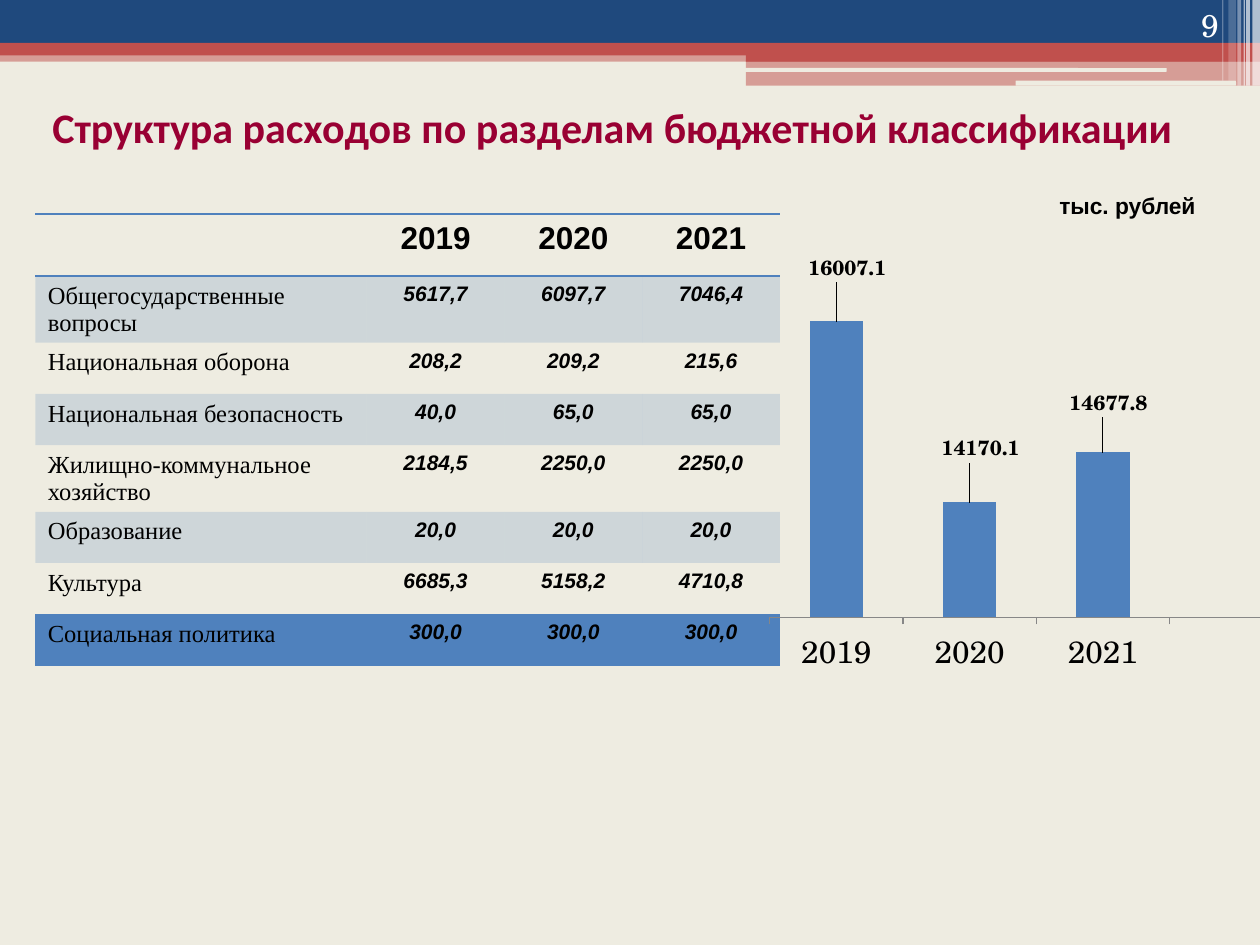
from dataclasses import dataclass

from lxml.etree import SubElement
from pptx import Presentation
from pptx.chart.data import CategoryChartData
from pptx.dml.color import RGBColor
from pptx.enum.chart import XL_CHART_TYPE, XL_LABEL_POSITION, XL_TICK_LABEL_POSITION, XL_TICK_MARK
from pptx.enum.shapes import MSO_SHAPE
from pptx.enum.text import MSO_ANCHOR, MSO_AUTO_SIZE, PP_ALIGN
from pptx.oxml import parse_xml
from pptx.oxml.ns import nsdecls, qn
from pptx.util import Inches, Pt

COLORS = {
    "cream": "EEECE1", "navy": "1F497D", "red": "C0504D", "blue": "4F81BD",
    "white": "FFFFFF", "black": "000000", "crimson": "990033", "gray": "878787",
}
SLIDE_WIDTH, SLIDE_HEIGHT = Inches(10), Inches(7.5)
COLUMN, ROW = SLIDE_WIDTH / 100, SLIDE_HEIGHT / 75
NO_STYLE = "{2D5ABB26-0587-4C30-8999-92F81FD0307C}"

YEARS = ["2019", "2020", "2021"]
EXPENSES = [
    ("Общегосударственные вопросы", "5617,7", "6097,7", "7046,4"),
    ("Национальная оборона", "208,2", "209,2", "215,6"),
    ("Национальная безопасность", "40,0", "65,0", "65,0"),
    ("Жилищно-коммунальное хозяйство", "2184,5", "2250,0", "2250,0"),
    ("Образование", "20,0", "20,0", "20,0"),
    ("Культура", "6685,3", "5158,2", "4710,8"),
    ("Социальная политика", "300,0", "300,0", "300,0"),
]
TOTALS = [16007.1, 14170.1, 14677.8]
LABEL_OFFSETS = [(0.02, -0.08), (0.02, -0.08), (0.01, -0.07)]


@dataclass
class Box:
    left: float
    top: float
    width: float
    height: float

    def inner(self, left, top, width, height):
        return Box(self.left + left, self.top + top, width, height)

    def emu(self):
        return (round(self.left * COLUMN), round(self.top * ROW),
                round(self.width * COLUMN), round(self.height * ROW))


def color(name):
    return RGBColor.from_string(COLORS[name])


def paint(fill, name, alpha=100):
    fill.solid()
    fill.fore_color.rgb = color(name)
    if alpha < 100:
        SubElement(fill._xPr.find(".//" + qn("a:srgbClr")), qn("a:alpha"), val=str(alpha * 1000))


def style(font, size, family, name="black", bold=False, italic=False):
    font.size, font.name, font.bold, font.italic = Pt(size), family, bold, italic
    font.color.rgb = color(name)


def add_bar(slide, box, name, alpha=100, kind=MSO_SHAPE.RECTANGLE):
    shape = slide.shapes.add_shape(kind, *box.emu())
    shape.shadow.inherit = False
    shape.line.fill.background()
    paint(shape.fill, name, alpha)


def add_header(slide, box):
    half = box.width - 59.2
    for place, name, alpha in [
        ((0, 4, box.width, 0.9), "red", 50),
        ((0, 0, box.width, 3.4), "navy", 100),
        ((0, 3.4, box.width, 1), "red", 100),
        ((59.2, 3.9, half, 1), "red", 100),
        ((59.2, 4.8, half, 2), "red", 50),
    ]:
        add_bar(slide, box.inner(*place), name, alpha)
    for place in [(59.1, 5.4, 33.5, 0.3), (80.6, 6.4, 17.5, 0.4)]:
        add_bar(slide, box.inner(*place), "cream", kind=MSO_SHAPE.ROUNDED_RECTANGLE)
    for left, width, height, alpha in [
        (99.4, 0.6, 6.8, 65), (98.9, 0.3, 6.8, 65), (98.7, 0.1, 6.8, 60),
        (98.2, 0.3, 6.8, 40), (97.5, 0.6, 6.4, 20), (97, 0.1, 6.4, 30),
    ]:
        add_bar(slide, box.inner(left, 0, width, height), "white", alpha)


def add_text(slide, box, text, align, grow=True, **look):
    frame = slide.shapes.add_textbox(*box.emu()).text_frame
    frame.word_wrap = True
    if grow:
        frame.auto_size = MSO_AUTO_SIZE.SHAPE_TO_FIT_TEXT
    else:
        frame.vertical_anchor = MSO_ANCHOR.BOTTOM
    paragraph = frame.paragraphs[0]
    paragraph.text, paragraph.alignment = text, align
    style(paragraph.font, **look)


def add_border(cell, side):
    line = SubElement(cell._tc.get_or_add_tcPr(), qn("a:" + side), w=str(Pt(1)))
    SubElement(SubElement(line, qn("a:solidFill")), qn("a:srgbClr"), val=COLORS["blue"])


def add_expense_table(slide, box):
    rows = [("", *YEARS), *EXPENSES]
    table = slide.shapes.add_table(len(rows), len(rows[0]), *box.emu()).table
    table._tbl.tblPr.find(qn("a:tableStyleId")).text = NO_STYLE
    year_width = 10.93
    for index, column in enumerate(table.columns):
        column.width = round((year_width if index else box.width - 3 * year_width) * COLUMN)
    for row_index, values in enumerate(rows):
        table.rows[row_index].height = round((4.06 if row_index else 4.9) * ROW)
        for column_index, text in enumerate(values):
            cell = table.cell(row_index, column_index)
            if row_index == 0:
                add_border(cell, "lnT")
            if row_index in (0, len(rows) - 1):
                add_border(cell, "lnB")
            if row_index % 2:
                paint(cell.fill, "blue", 20)
            else:
                cell.fill.background()
            if not text:
                continue
            paragraph = cell.text_frame.paragraphs[0]
            paragraph.text = text
            if column_index == 0:
                style(paragraph.font, 14, "Times New Roman")
                continue
            paragraph.alignment = PP_ALIGN.CENTER
            body = row_index > 0
            style(paragraph.font, 12 if body else 18, "Arial", bold=True, italic=body)


def manual_layout(left, top, width=None, height=None):
    parts = {"x": left, "y": top}
    modes = ""
    if width:
        parts.update(w=width, h=height)
        modes = '<c:layoutTarget val="inner"/><c:xMode val="edge"/><c:yMode val="edge"/>'
    values = "".join(f'<c:{key} val="{value}"/>' for key, value in parts.items())
    return parse_xml(f"<c:layout {nsdecls('c')}><c:manualLayout>{modes}{values}"
                     "</c:manualLayout></c:layout>")


def add_total_chart(slide, box):
    data = CategoryChartData(number_format="0.0")
    data.categories = [*YEARS, ""]
    data.add_series("Series 1", [*TOTALS, None])
    chart = slide.shapes.add_chart(XL_CHART_TYPE.COLUMN_CLUSTERED, *box.emu(), data).chart
    chart.has_legend = chart.has_title = False
    style(chart.font, 18, "TeX Gyre Schola")

    value_axis = chart.value_axis
    value_axis.minimum_scale, value_axis.maximum_scale = 13000, 16500
    value_axis.has_major_gridlines = False
    value_axis.visible = False
    category_axis = chart.category_axis
    category_axis.major_tick_mark = XL_TICK_MARK.OUTSIDE
    category_axis.tick_label_position = XL_TICK_LABEL_POSITION.LOW
    category_axis.format.line.color.rgb = color("gray")

    plot = chart.plots[0]
    plot.gap_width, plot.vary_by_categories = 150, False
    series = plot.series[0]
    paint(series.format.fill, "blue")
    labels = series.data_labels
    labels.show_value = True
    labels.number_format, labels.number_format_is_linked = "0.0", False
    style(labels.font, 12, "TeX Gyre Schola", bold=True)
    for index, offset in enumerate(LABEL_OFFSETS):
        label = series.points[index].data_label
        label.position = XL_LABEL_POSITION.OUTSIDE_END
        style(label.font, 12, "TeX Gyre Schola", bold=True)
        labels._element.findall(qn("c:dLbl"))[index].insert(1, manual_layout(*offset))

    area = chart._chartSpace.chart.plotArea
    for layout in area.findall(qn("c:layout")):
        area.remove(layout)
    area.insert(0, manual_layout(0.02, 0.03, 0.96, 0.82))


def build_slide(presentation):
    slide = presentation.slides.add_slide(presentation.slide_layouts[6])
    paint(slide.background.fill, "cream")
    add_header(slide, Box(0, 0, 100, 6.8))
    add_expense_table(slide, Box(2.8, 17, 59.1, 35.7))
    add_text(slide, Box(0, 7.6, 97.2, 5), "Структура расходов по разделам бюджетной классификации",
             PP_ALIGN.CENTER, size=24, family="Calibri", name="crimson", bold=True)
    add_text(slide, Box(89.4, 0, 8.3, 4), "9", PP_ALIGN.RIGHT, grow=False,
             size=18, family="TeX Gyre Schola", name="white")
    add_text(slide, Box(83.1, 14.7, 15, 3.2), "тыс. рублей", PP_ALIGN.LEFT,
             size=13, family="Arial", bold=True)
    add_total_chart(slide, Box(60.2, 19.9, 44.1, 34.1))


def main():
    presentation = Presentation()
    presentation.slide_width, presentation.slide_height = SLIDE_WIDTH, SLIDE_HEIGHT
    build_slide(presentation)
    presentation.save("out.pptx")


if __name__ == "__main__":
    main()
